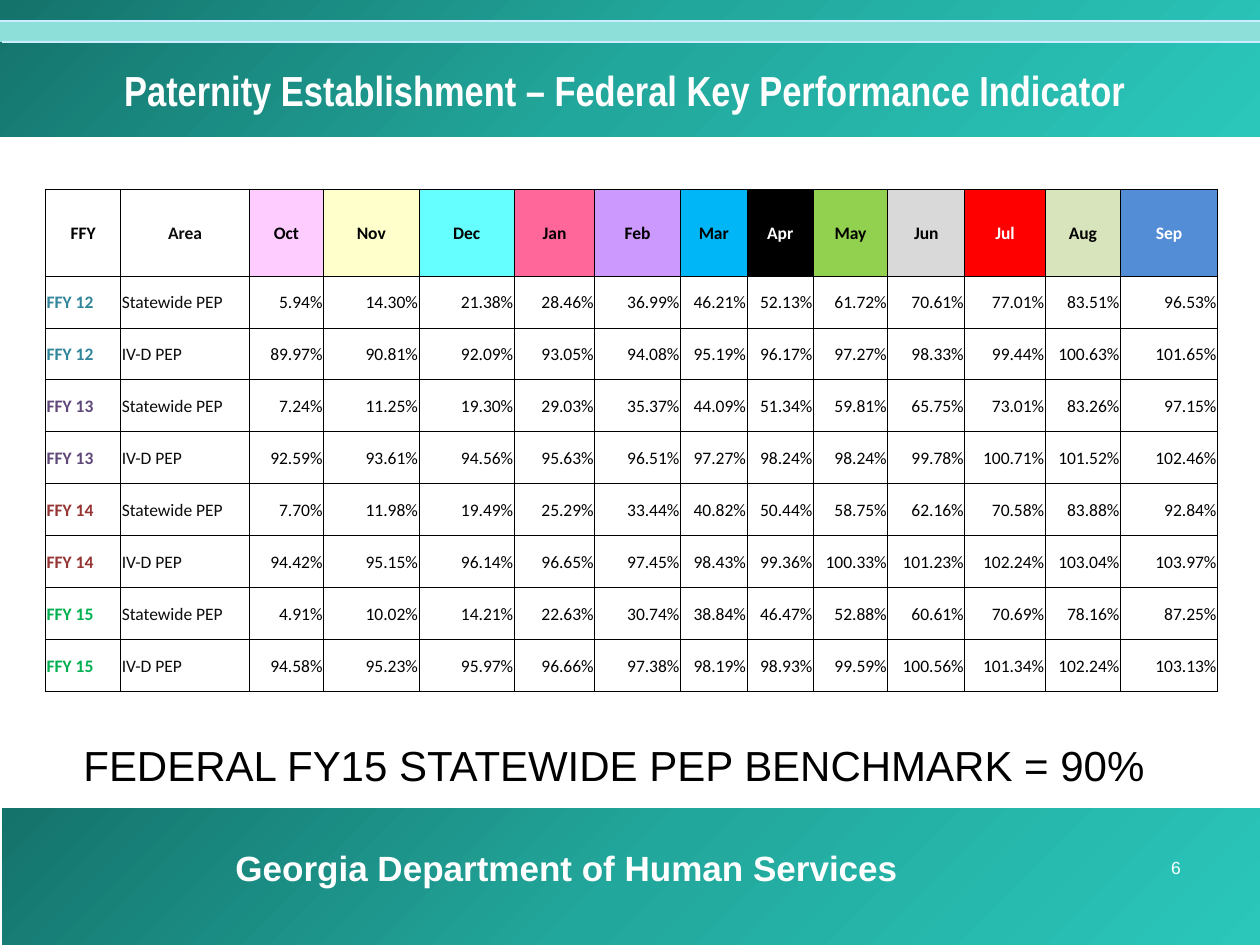
from lxml.etree import SubElement
from pptx import Presentation
from pptx.dml.color import RGBColor
from pptx.enum.shapes import MSO_CONNECTOR, MSO_SHAPE
from pptx.enum.text import MSO_ANCHOR as Anchor, PP_ALIGN as Align
from pptx.oxml.ns import qn
from pptx.util import Pt

WHITE = RGBColor(0xFF, 0xFF, 0xFF)
BLACK = RGBColor(0x00, 0x00, 0x00)
CHARCOAL = RGBColor(0x0D, 0x0D, 0x0D)
PALE_TEAL = RGBColor(0x8D, 0xDF, 0xD9)
PALE_BLUE = RGBColor(0xCC, 0xEC, 0xFF)
DARK_TEAL = RGBColor(0x14, 0x73, 0x6B)
MID_TEAL = RGBColor(0x22, 0xA7, 0x9C)
BRIGHT_TEAL = RGBColor(0x2B, 0xC7, 0xBB)
BAND_STOPS = [(0, DARK_TEAL), (50, MID_TEAL), (100, BRIGHT_TEAL)]

HEADINGS = [
    ("FFY", None, BLACK, 43),
    ("Area", None, CHARCOAL, 73.5),
    ("Oct", RGBColor(0xFF, 0xCC, 0xFF), BLACK, 42.5),
    ("Nov", RGBColor(0xFF, 0xFF, 0xCC), BLACK, 54.5),
    ("Dec", RGBColor(0x66, 0xFF, 0xFF), BLACK, 54.5),
    ("Jan", RGBColor(0xFF, 0x66, 0x99), BLACK, 46),
    ("Feb", RGBColor(0xCC, 0x99, 0xFF), BLACK, 49),
    ("Mar", RGBColor(0x00, 0xB6, 0xF6), BLACK, 38),
    ("Apr", BLACK, WHITE, 38),
    ("May", RGBColor(0x92, 0xD0, 0x50), BLACK, 42.5),
    ("Jun", RGBColor(0xD9, 0xD9, 0xD9), BLACK, 44),
    ("Jul", RGBColor(0xFF, 0x00, 0x00), WHITE, 46),
    ("Aug", RGBColor(0xD8, 0xE4, 0xBC), BLACK, 43),
    ("Sep", RGBColor(0x53, 0x8D, 0xD5), WHITE, 55.5),
]
YEAR_COLORS = {
    "FFY 12": RGBColor(0x31, 0x86, 0x9B),
    "FFY 13": RGBColor(0x60, 0x49, 0x7A),
    "FFY 14": RGBColor(0x96, 0x36, 0x34),
    "FFY 15": RGBColor(0x00, 0xB0, 0x50),
}
AREAS = ["Statewide PEP", "IV-D PEP"]
RATES = [
    [5.94, 14.30, 21.38, 28.46, 36.99, 46.21, 52.13, 61.72, 70.61, 77.01, 83.51, 96.53],
    [89.97, 90.81, 92.09, 93.05, 94.08, 95.19, 96.17, 97.27, 98.33, 99.44, 100.63, 101.65],
    [7.24, 11.25, 19.30, 29.03, 35.37, 44.09, 51.34, 59.81, 65.75, 73.01, 83.26, 97.15],
    [92.59, 93.61, 94.56, 95.63, 96.51, 97.27, 98.24, 98.24, 99.78, 100.71, 101.52, 102.46],
    [7.70, 11.98, 19.49, 25.29, 33.44, 40.82, 50.44, 58.75, 62.16, 70.58, 83.88, 92.84],
    [94.42, 95.15, 96.14, 96.65, 97.45, 98.43, 99.36, 100.33, 101.23, 102.24, 103.04, 103.97],
    [4.91, 10.02, 14.21, 22.63, 30.74, 38.84, 46.47, 52.88, 60.61, 70.69, 78.16, 87.25],
    [94.58, 95.23, 95.97, 96.66, 97.38, 98.19, 98.93, 99.59, 100.56, 101.34, 102.24, 103.13],
]
HEADER_HEIGHT, ROW_HEIGHT = 49.7, 29.7


def style_text(frame, text, font_name, size, color, bold, align):
    frame.text = text
    paragraph = frame.paragraphs[0]
    paragraph.alignment = align
    font = paragraph.runs[0].font
    font.name, font.size, font.bold = font_name, Pt(size), bold
    font.color.rgb = color


def add_bar(slide, left, top, width, height):
    bar = slide.shapes.add_shape(
        MSO_SHAPE.RECTANGLE, Pt(left), Pt(top), Pt(width), Pt(height))
    bar.shadow.inherit = False
    bar.line.fill.background()
    return bar


def add_gradient_band(slide, left, top, width, height):
    band = add_bar(slide, left, top, width, height)
    band.fill.gradient()
    band.fill.gradient_angle = 315
    stops = next(band.element.iter(qn("a:gsLst")))
    stops.clear()
    for percent, color in BAND_STOPS:
        stop = SubElement(stops, qn("a:gs"), pos=str(percent * 1000))
        SubElement(stop, qn("a:srgbClr"), val=str(color))


def add_rule(slide, left, right, y):
    rule = slide.shapes.add_connector(
        MSO_CONNECTOR.STRAIGHT, Pt(left), Pt(y), Pt(right), Pt(y))
    rule.line.color.rgb = PALE_BLUE
    rule.line.width = Pt(1.5)
    SubElement(rule.element.spPr, qn("a:effectLst"))


def add_label(slide, text, left, top, width, height, size, color=WHITE,
              font_name="Arial", bold=False, align=Align.CENTER, anchor=Anchor.TOP):
    label = slide.shapes.add_textbox(Pt(left), Pt(top), Pt(width), Pt(height))
    frame = label.text_frame
    frame.word_wrap = True
    frame.vertical_anchor = anchor
    style_text(frame, text, font_name, size, color, bold, align)


def add_borders(cell):
    properties = cell._tc.get_or_add_tcPr()
    for side in ("lnL", "lnR", "lnT", "lnB"):
        border = SubElement(properties, qn(f"a:{side}"), w=str(Pt(0.5)))
        fill = SubElement(border, qn("a:solidFill"))
        SubElement(fill, qn("a:srgbClr"), val=str(BLACK))


def fill_cell(cell, text, color, bold, align, background=None):
    cell.margin_left = cell.margin_right = cell.margin_top = Pt(0.7)
    cell.margin_bottom = 0
    cell.vertical_anchor = Anchor.MIDDLE
    add_borders(cell)
    if background is None:
        cell.fill.background()
    else:
        cell.fill.solid()
        cell.fill.fore_color.rgb = background
    style_text(cell.text_frame, text, "Calibri", 10, color, bold, align)


def add_rate_table(slide, left, top):
    width = sum(heading[-1] for heading in HEADINGS)
    height = HEADER_HEIGHT + ROW_HEIGHT * len(RATES)
    table = slide.shapes.add_table(
        len(RATES) + 1, len(HEADINGS), Pt(left), Pt(top), Pt(width), Pt(height)).table
    table.first_row = table.horz_banding = False
    table.rows[0].height = Pt(HEADER_HEIGHT)
    for column, (name, background, color, column_width) in enumerate(HEADINGS):
        table.columns[column].width = Pt(column_width)
        fill_cell(table.cell(0, column), name, color, True, Align.CENTER, background)

    periods = [(year, area) for year in YEAR_COLORS for area in AREAS]
    for row, ((year, area), rates) in enumerate(zip(periods, RATES), start=1):
        table.rows[row].height = Pt(ROW_HEIGHT)
        fill_cell(table.cell(row, 0), year, YEAR_COLORS[year], True, Align.LEFT)
        fill_cell(table.cell(row, 1), area, CHARCOAL, False, Align.LEFT)
        for column, rate in enumerate(rates, start=2):
            fill_cell(table.cell(row, column), f"{rate:.2f}%", BLACK, False, Align.RIGHT)


def main():
    deck = Presentation()
    deck.slide_width, deck.slide_height = Pt(720), Pt(540)
    slide = deck.slides.add_slide(deck.slide_layouts[6])

    add_gradient_band(slide, 1.2, 462, 720, 78)
    add_gradient_band(slide, 0, 0, 720, 78)
    stripe = add_bar(slide, 0, 12, 720, 12)
    stripe.fill.solid()
    stripe.fill.fore_color.rgb = PALE_TEAL
    add_rule(slide, 0, 720, 12)
    add_rule(slide, 1.2, 720, 24)

    add_label(slide, "Paternity Establishment – Federal Key Performance Indicator",
              0, 24, 714, 54, 24, font_name="Arial Narrow", bold=True,
              anchor=Anchor.MIDDLE)
    add_label(slide, "Georgia Department of Human Services",
              127.5, 480, 448.5, 31.5, 20, bold=True, align=Align.LEFT)
    add_label(slide, "FEDERAL FY15 STATEWIDE PEP BENCHMARK = 90%",
              30, 419, 642, 36, 24, color=BLACK)
    add_label(slide, "6", 648, 486, 48, 30, 10)
    add_rate_table(slide, 26, 108)

    deck.save("out.pptx")


if __name__ == "__main__":
    main()
